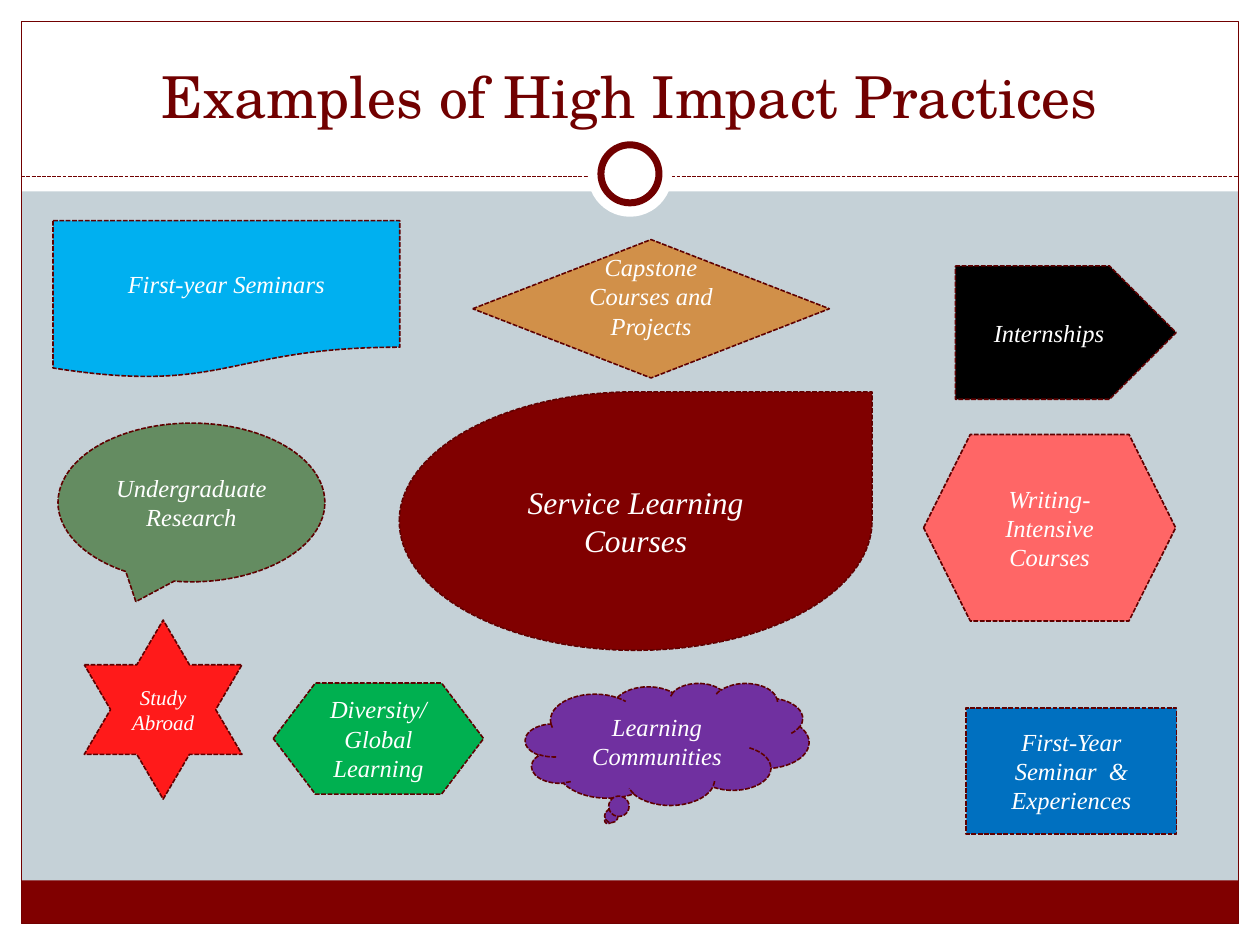
"""Build a slide of high impact practices shown as labelled shapes."""
from dataclasses import dataclass

from lxml.etree import SubElement
from pptx import Presentation
from pptx.dml.color import RGBColor as RGB
from pptx.enum.dml import MSO_LINE as Dash
from pptx.enum.shapes import MSO_CONNECTOR as Conn, MSO_SHAPE as Form
from pptx.enum.text import MSO_ANCHOR as Anchor, PP_ALIGN as Align
from pptx.oxml.ns import qn
from pptx.util import Cm, Pt


@dataclass(frozen=True)
class Theme:
    """Colours, fonts and type sizes of the slide."""
    back: str = "C5D1D7"
    white: str = "FFFFFF"
    dark: str = "710000"
    edge: str = "5F0000"
    maroon: str = "800000"
    red: str = "FF1A1A"
    sky: str = "00B0F0"
    sage: str = "648C61"
    coral: str = "FF6666"
    purple: str = "7030A0"
    black: str = "000000"
    tan: str = "D19049"
    blue: str = "0070C0"
    green: str = "00B050"
    head: str = "TeX Gyre Schola"
    body: str = "Times New Roman"
    title: int = 33
    large: int = 18
    mid: int = 14
    small: int = 12


THEME = Theme()
WIDE, HIGH, EDGE = 25.4, 19.05, 0.43
INNER = WIDE - 2 * EDGE
RULE = 3.56

ITEMS = [
    ("Study Abroad", Form.STAR_6_POINT, (1.7, 12.5, 3.18, 3.61),
     THEME.red, THEME.small),
    ("First-year Seminars", Form.FLOWCHART_DOCUMENT, (1.07, 4.45, 6.99, 3.18),
     THEME.sky, THEME.mid),
    ("Service Learning Courses", Form.TEAR, (8.05, 7.9, 9.53, 5.21),
     THEME.maroon, THEME.large),
    ("Undergraduate Research", Form.OVAL_CALLOUT, (1.17, 8.53, 5.38, 3.2),
     THEME.sage, THEME.mid),
    ("Writing-Intensive Courses", Form.HEXAGON, (18.62, 8.76, 5.08, 3.76),
     THEME.coral, THEME.mid),
    ("Learning Communities", Form.CLOUD_CALLOUT, (10.59, 13.77, 5.72, 2.46),
     THEME.purple, THEME.mid),
    ("Internships", Form.PENTAGON, (19.26, 5.36, 4.45, 2.69),
     THEME.black, THEME.mid),
    ("Capstone Courses and Projects", Form.FLOWCHART_DECISION,
     (9.53, 4.83, 7.19, 2.79), THEME.tan, THEME.mid, 0.64),
    ("First-Year Seminar  & Experiences", Form.RECTANGLE,
     (19.48, 14.27, 4.24, 2.54), THEME.blue, THEME.mid),
    ("Diversity/Global Learning", Form.FLOWCHART_PREPARATION,
     (5.51, 13.77, 4.24, 2.24), THEME.green, THEME.mid),
]


def ink(line, color, width, dash=None):
    """Set the colour, width and dash of a line."""
    line.color.rgb = RGB.from_string(color)
    line.width = Pt(width)
    if dash:
        line.dash_style = dash


def put(slide, form, box, fill=None, edge=None):
    """Add a shape with an optional fill and an optional edge."""
    shape = slide.shapes.add_shape(form, *map(Cm, box))
    shape.shadow.inherit = False
    if fill:
        shape.fill.solid()
        shape.fill.fore_color.rgb = RGB.from_string(fill)
    else:
        shape.fill.background()
    if edge:
        ink(shape.line, *edge)
    else:
        shape.line.fill.background()
    return shape


def write(shape, text, *, font=THEME.body, size=THEME.mid, color=THEME.white,
          italic=False, anchor=Anchor.MIDDLE, foot=0.13):
    """Write centred text into a shape."""
    frame = shape.text_frame
    frame.word_wrap = True
    frame.vertical_anchor = anchor
    frame.margin_bottom = Cm(foot)
    para = frame.paragraphs[0]
    para.alignment = Align.CENTER
    run = para.add_run()
    run.text = text
    run.font.name = font
    run.font.size = Pt(size)
    run.font.italic = italic
    run.font.color.rgb = RGB.from_string(color)


def rule(slide):
    """Draw the dashed line under the title."""
    line = slide.shapes.add_connector(
        Conn.STRAIGHT, Cm(EDGE), Cm(RULE), Cm(WIDE - EDGE), Cm(RULE))
    ink(line.line, THEME.dark, 0.75, Dash.SQUARE_DOT)
    SubElement(line._element.spPr, qn("a:effectLst"))


def disc(slide, top, size, edge=None):
    """Draw a white disc centred across the slide."""
    box = ((WIDE - size) / 2, top, size, size)
    put(slide, Form.OVAL, box, THEME.white, edge)


def decor(slide):
    """Draw the margins, footer, frame, rule and ring."""
    for box in ((0, HIGH - EDGE, WIDE, EDGE), (0, 0, WIDE, 3.86),
                (0, 0, EDGE, HIGH), (WIDE - EDGE, 0, EDGE, HIGH)):
        put(slide, Form.RECTANGLE, box, THEME.white)
    put(slide, Form.RECTANGLE, (EDGE, 17.75, INNER, 0.87), THEME.maroon)
    put(slide, Form.RECTANGLE, (EDGE, EDGE, INNER, HIGH - 2 * EDGE),
        edge=(THEME.dark, 0.75))
    rule(slide)
    disc(slide, 2.67, 1.7)
    disc(slide, 2.92, 1.17, (THEME.dark, 4))


def label(slide, text, form, box, fill, size, foot=0.13):
    """Draw one practice as a filled, dashed shape."""
    shape = put(slide, form, box, fill, (THEME.edge, 0.9, Dash.SQUARE_DOT))
    write(shape, text, size=size, italic=True, foot=foot)


def main():
    """Build and save the slide."""
    deck = Presentation()
    deck.slide_width, deck.slide_height = Cm(WIDE), Cm(HIGH)
    slide = deck.slides.add_slide(deck.slide_layouts[6])
    back = slide.background.fill
    back.solid()
    back.fore_color.rgb = RGB.from_string(THEME.back)
    decor(slide)
    title = slide.shapes.add_textbox(*map(Cm, (0.85, 0.64, 23.7, 2.11)))
    write(title, "Examples of High Impact Practices", font=THEME.head,
          size=THEME.title, color=THEME.dark, anchor=Anchor.BOTTOM)
    for item in ITEMS:
        label(slide, *item)
    deck.save("out.pptx")


if __name__ == "__main__":
    main()
